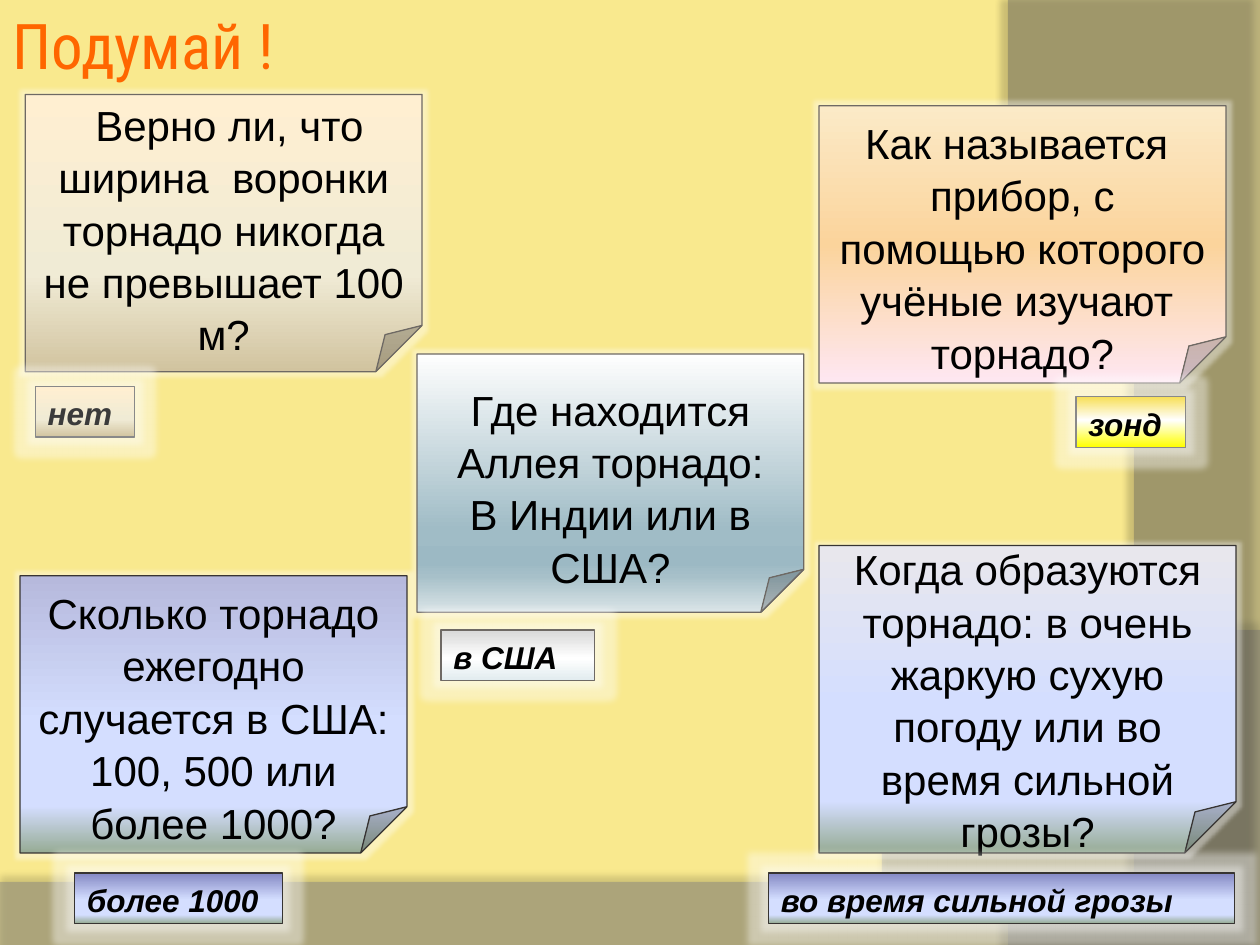
import pptx
import pptx.util
import pptx.dml.color
import pptx.enum.shapes
import pptx.enum.text
import pptx.oxml.ns
from lxml import etree

Inches = pptx.util.Inches
Pt = pptx.util.Pt
KIND = pptx.enum.shapes.MSO_SHAPE
ANCHOR = pptx.enum.text.MSO_ANCHOR
ALIGN = pptx.enum.text.PP_ALIGN

HUES = {
    "back": "F9E98E", "wave": "7F7F7F", "side": "5E5E5E", "glow": "FFFFFF",
    "shade": "000000", "text": "000000", "soft": "3B3B3B", "title": "FF6600",
    "warm": "6E6964", "dark": "373432", "gray": "898989",
}
BLUE = [(53, "D4DEFF"), (83, "D4DEFF"), (100, "96AB94")]
FADES = {
    "sand": [(0, "FFEFD1"), (65, "F0EBD5"), (100, "D1C39F")],
    "peach": [(0, "FBEAC7"), (50, "FBD49C"), (100, "FEE7F2")],
    "steel": [(0, "FEFEFE"), (68, "A0BCC6"), (81, "9CB9C4"),
              (86, "A7C0C9"), (100, "DAE4E7")],
    "lilac": [(0, "B6B9DC")] + BLUE,
    "mist": [(0, "E8E7ED")] + BLUE,
    "deep": [(0, "8488C4")] + BLUE,
    "silver": [(0, "D8D8D8"), (56, "FFFFFF"), (100, "E2ECEF")],
    "lemon": [(0, "F7DF56"), (46, "FFFFFF"), (100, "FFFF00")],
}

NOTES = [
    ((0.2, 0.75, 3.15, 2.2), "sand", "warm", 0.34,
     " Верно ли, что ширина  воронки торнадо никогда не превышает 100 м?"),
    ((6.5, 0.84, 3.23, 2.2), "peach", "warm", 0.45,
     "Как называется  прибор, с помощью которого учёные изучают  торнадо?"),
    ((3.31, 2.81, 3.07, 2.05), "steel", "warm", 0.45,
     "Где находится Аллея торнадо:\nВ Индии или в США?"),
    ((0.16, 4.57, 3.07, 2.2), "lilac", "dark", 0.45,
     "Сколько торнадо ежегодно случается в США: 100, 500 или более 1000?"),
    ((6.5, 4.33, 3.31, 2.44), "mist", "dark", 0.45,
     "Когда образуются торнадо: в очень жаркую сухую погоду или во время "
     "сильной грозы?"),
]
TAGS = [
    ((0.28, 3.07, 0.79, 0.4), "sand", "gray", "soft", "нет"),
    ((3.5, 5, 1.22, 0.4), "silver", "warm", "text", "в США"),
    ((8.54, 3.15, 0.87, 0.4), "lemon", "gray", "text", "зонд"),
    ((0.59, 6.93, 1.65, 0.4), "deep", "dark", "text", "более 1000"),
    ((6.1, 6.93, 3.7, 0.4), "deep", "dark", "text", "во время сильной грозы"),
]


def rgb(hue):
    return pptx.dml.color.RGBColor.from_string(hue)


def put(item, form):
    for name, value in form.items():
        setattr(item, name, value)


def node(base, tag, **attrs):
    return etree.SubElement(base, pptx.oxml.ns.qn("a:" + tag),
                            {key: str(value) for key, value in attrs.items()})


def tint(base, hue, part=100):
    color = node(base, "srgbClr", val=hue)
    if part < 100:
        node(color, "alpha", val=part * 1000)


def effect(shape, tag, hue, part, **attrs):
    shape.shadow.inherit = False
    base = shape._element.spPr.find(pptx.oxml.ns.qn("a:effectLst"))
    tint(node(base, tag, **attrs), hue, part)


def fade(shape, stops):
    shape.fill.gradient()
    shape.fill.gradient_angle = 270
    base = shape._element.spPr.find(".//" + pptx.oxml.ns.qn("a:gsLst"))
    for old in list(base):
        base.remove(old)
    for spot, hue in stops:
        tint(node(base, "gs", pos=spot * 1000), hue)


def write(shape, text, box, para, font, hue):
    frame = shape.text_frame
    frame.text = text
    put(frame, {"word_wrap": True,
                "auto_size": pptx.enum.text.MSO_AUTO_SIZE.NONE, **box})
    for line in frame.paragraphs:
        put(line, para)
        for run in line.runs:
            put(run.font, font)
            run.font.color.rgb = rgb(hue)


def card(slide, kind, spot, stops, edge, glow):
    shape = slide.shapes.add_shape(kind, *map(Inches, spot))
    fade(shape, stops)
    shape.line.color.rgb = rgb(edge)
    shape.line.width = Pt(0.75)
    effect(shape, "glow", HUES["glow"], 40, rad=Pt(glow))
    return shape


def note(slide, spot, stops, edge, top, text):
    shape = card(slide, KIND.FOLDED_CORNER, spot, FADES[stops], HUES[edge], 5)
    write(shape, text,
          {"vertical_anchor": ANCHOR.MIDDLE, "margin_top": Inches(top)},
          {"alignment": ALIGN.CENTER, "line_spacing": 1.04},
          {"size": Pt(24), "name": "Arial"}, HUES["text"])


def tag(slide, spot, stops, edge, hue, text):
    shape = card(slide, KIND.RECTANGLE, spot, FADES[stops], HUES[edge], 8)
    write(shape, text, {"vertical_anchor": ANCHOR.TOP},
          {"alignment": ALIGN.LEFT, "line_spacing": 1.04},
          {"size": Pt(18), "name": "Arial", "bold": True, "italic": True},
          HUES[hue])


def curve(ends, count=40):
    dots = []
    for step in range(count + 1):
        t = step / count
        rates = ((1 - t) ** 3, 3 * t * (1 - t) ** 2, 3 * t * t * (1 - t), t ** 3)
        dots.append(tuple(sum(rate * end[axis] for rate, end in zip(rates, ends))
                          for axis in (0, 1)))
    return dots


def swoop(slide, dots, hue, part, shade, far, turn):
    form = slide.shapes.build_freeform(*dots[0], scale=Inches(1))
    form.add_line_segments(dots[1:], close=True)
    shape = form.convert_to_shape()
    shape.fill.solid()
    shape.fill.fore_color.rgb = rgb(hue)
    color = shape._element.spPr.find(".//" + pptx.oxml.ns.qn("a:srgbClr"))
    node(color, "alpha", val=part * 1000)
    shape.line.fill.background()
    effect(shape, "outerShdw", HUES["shade"], shade, blurRad=Pt(4),
           dist=Pt(far), dir=turn * 60000, algn="ctr", rotWithShape=0)


def head(slide, text):
    title = slide.shapes.title
    put(title, {"left": 0, "top": 0, "width": Inches(10), "height": Inches(0.7)})
    write(title, text, {"vertical_anchor": ANCHOR.MIDDLE},
          {"alignment": ALIGN.LEFT},
          {"size": Pt(36), "name": "Roboto Condensed"}, HUES["title"])


def main():
    deck = pptx.Presentation()
    put(deck, {"slide_width": Inches(10), "slide_height": Inches(7.5)})
    slide = deck.slides.add_slide(deck.slide_layouts[5])
    slide.background.fill.solid()
    slide.background.fill.fore_color.rgb = rgb(HUES["back"])
    wave = curve([(10, 5.2), (5.59, 7.29), (3.91, 7.19), (0, 7.05)])
    side = curve([(8.21, 7.5), (9.35, 6.19), (10.18, 3), (8, 0)])
    swoop(slide, [(0, 7.5), (10, 7.5)] + wave, HUES["wave"], 45, 35, 3.5, 270)
    swoop(slide, [(10, 0.02), (10, 7.5)] + side, HUES["side"], 40, 45, 4, 180)
    for row in NOTES:
        note(slide, *row)
    for row in TAGS:
        tag(slide, *row)
    head(slide, "Подумай !")
    deck.save("out.pptx")


if __name__ == "__main__":
    main()
